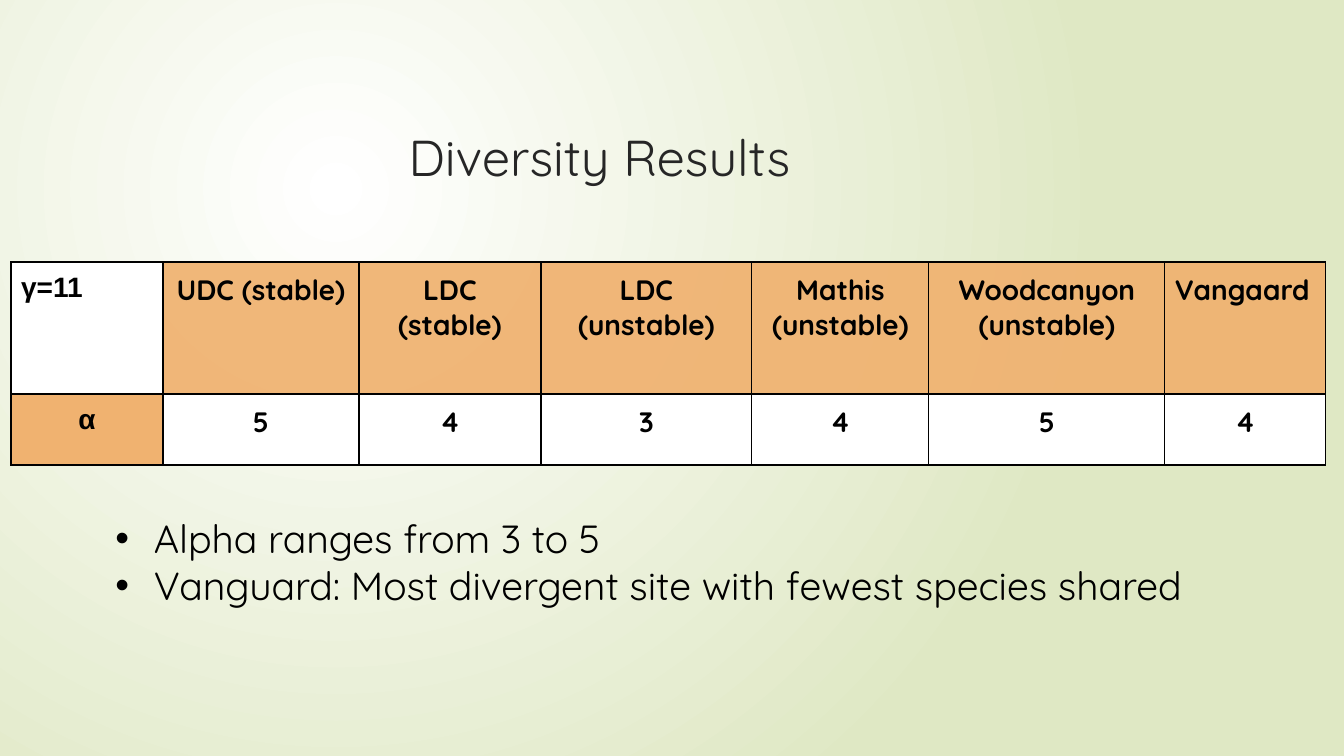
from lxml import etree
from pptx import Presentation
from pptx import util as u
from pptx.dml.color import RGBColor
from pptx.enum import text
from pptx.oxml.ns import qn

EMU_PER_PX = 914400 / 100.8
BLACK, WHITE, ORANGE = "000000", "FFFFFF", "F0B270"
SITES = [["UDC (stable)"], ["LDC (stable)"], ["LDC", "(unstable)"],
         ["Mathis (unstable)"], ["Woodcanyon (unstable)"], ["Vangaard"]]
ALPHA_VALUES = ["5", "4", "3", "4", "5", "4"]
COLUMN_WIDTHS = [152, 196, 182, 211, 177, 236, 161]
ROW_HEIGHTS = [132, 71]
FINDINGS = ["Alpha ranges from 3 to 5",
            "Vanguard: Most divergent site with fewest species shared"]


def px(length):
    return u.Emu(round(length * EMU_PER_PX))


def rgb(color):
    return RGBColor.from_string(color)


def place(shape, left, top, width, height):
    shape.left, shape.top = px(left), px(top)
    shape.width, shape.height = px(width), px(height)


def add_run(paragraph, words, size, color, font="Quicksand", bold=False):
    run = paragraph.add_run()
    run.text = words
    run.font.size, run.font.name, run.font.bold = u.Pt(size), font, bold
    run.font.color.rgb = rgb(color)


def paragraphs(frame, count):
    """Return the frame's paragraphs, extended to the wanted count."""
    for _ in range(count - 1):
        frame.add_paragraph()
    return frame.paragraphs


def paint_background(slide):
    fill = slide.background.fill
    fill.gradient()
    for stop, color in zip(fill.gradient_stops, [WHITE, "DFE8C4"]):
        stop.color.rgb = rgb(color)
    linear = slide.element.find(".//" + qn("a:lin"))
    circle = etree.Element(qn("a:path"), {"path": "circle"})
    etree.SubElement(circle, qn("a:fillToRect"),
                     {"l": "50000", "t": "50000", "r": "100000", "b": "100000"})
    linear.getparent().replace(linear, circle)


def add_borders(properties):
    """Put a thin black line on each side, ahead of the cell's fill."""
    for index, side in enumerate(["lnL", "lnR", "lnT", "lnB"]):
        line = etree.Element(qn("a:" + side), {"w": "12700"})
        solid = etree.SubElement(line, qn("a:solidFill"))
        etree.SubElement(solid, qn("a:srgbClr"), {"val": BLACK})
        properties.insert(index, line)


def fill_cell(cell, lines, fill, align=text.PP_ALIGN.CENTER,
              font="Quicksand", opacity=100):
    cell.margin_left = cell.margin_right = u.Inches(0.1)
    cell.margin_top = cell.margin_bottom = u.Inches(0.1)
    cell.vertical_anchor = text.MSO_ANCHOR.TOP
    for paragraph, line in zip(paragraphs(cell.text_frame, len(lines)), lines):
        paragraph.alignment = align
        add_run(paragraph, line, 20, BLACK, font, bold=True)
    cell.fill.solid()
    cell.fill.fore_color.rgb = rgb(fill)
    properties = cell._tc.get_or_add_tcPr()
    if opacity < 100:
        color = properties.find(".//" + qn("a:srgbClr"))
        etree.SubElement(color, qn("a:alpha"), {"val": str(opacity * 1000)})
    add_borders(properties)


def add_diversity_table(slide):
    table = slide.shapes.add_table(
        len(ROW_HEIGHTS), len(COLUMN_WIDTHS), px(11), px(262),
        px(sum(COLUMN_WIDTHS)), px(sum(ROW_HEIGHTS))).table
    for column, width in zip(table.columns, COLUMN_WIDTHS):
        column.width = px(width)
    for row, height in zip(table.rows, ROW_HEIGHTS):
        row.height = px(height)
    left = text.PP_ALIGN.LEFT
    fill_cell(table.cell(0, 0), ["γ=11"], WHITE, left, "Arial")
    fill_cell(table.cell(1, 0), ["α"], ORANGE, font="Arial")
    for column, (site, alpha) in enumerate(zip(SITES, ALPHA_VALUES), 1):
        align = left if site == SITES[-1] else text.PP_ALIGN.CENTER
        fill_cell(table.cell(0, column), site, ORANGE, align, opacity=93)
        fill_cell(table.cell(1, column), [alpha], WHITE)


def write_title(title):
    place(title, 115, 121, 983, 141)
    frame = title.text_frame
    frame.auto_size = text.MSO_AUTO_SIZE.NONE
    frame.vertical_anchor = text.MSO_ANCHOR.TOP
    paragraph = frame.paragraphs[0]
    paragraph.alignment = text.PP_ALIGN.CENTER
    add_run(paragraph, "Diversity Results ", 36, "262626")


def write_findings(body):
    place(body, 55, 509, 1271, 105)
    frame = body.text_frame
    frame.auto_size = text.MSO_AUTO_SIZE.SHAPE_TO_FIT_TEXT
    for paragraph, finding in zip(paragraphs(frame, len(FINDINGS)), FINDINGS):
        paragraph.level = 1
        paragraph.space_before = u.Pt(0)
        properties = paragraph._p.get_or_add_pPr()
        properties.set("marL", str(u.Inches(0.88)))
        properties.set("indent", str(u.Inches(-0.38)))
        etree.SubElement(properties, qn("a:buFont"), {"typeface": "Arial"})
        etree.SubElement(properties, qn("a:buChar"), {"char": "•"})
        add_run(paragraph, finding, 28, BLACK)


def main():
    deck = Presentation()
    deck.slide_width, deck.slide_height = px(1344), px(756)
    slide = deck.slides.add_slide(deck.slide_layouts[1])
    paint_background(slide)
    add_diversity_table(slide)
    write_title(slide.shapes.title)
    write_findings(slide.placeholders[1])
    deck.save("out.pptx")


if __name__ == "__main__":
    main()
